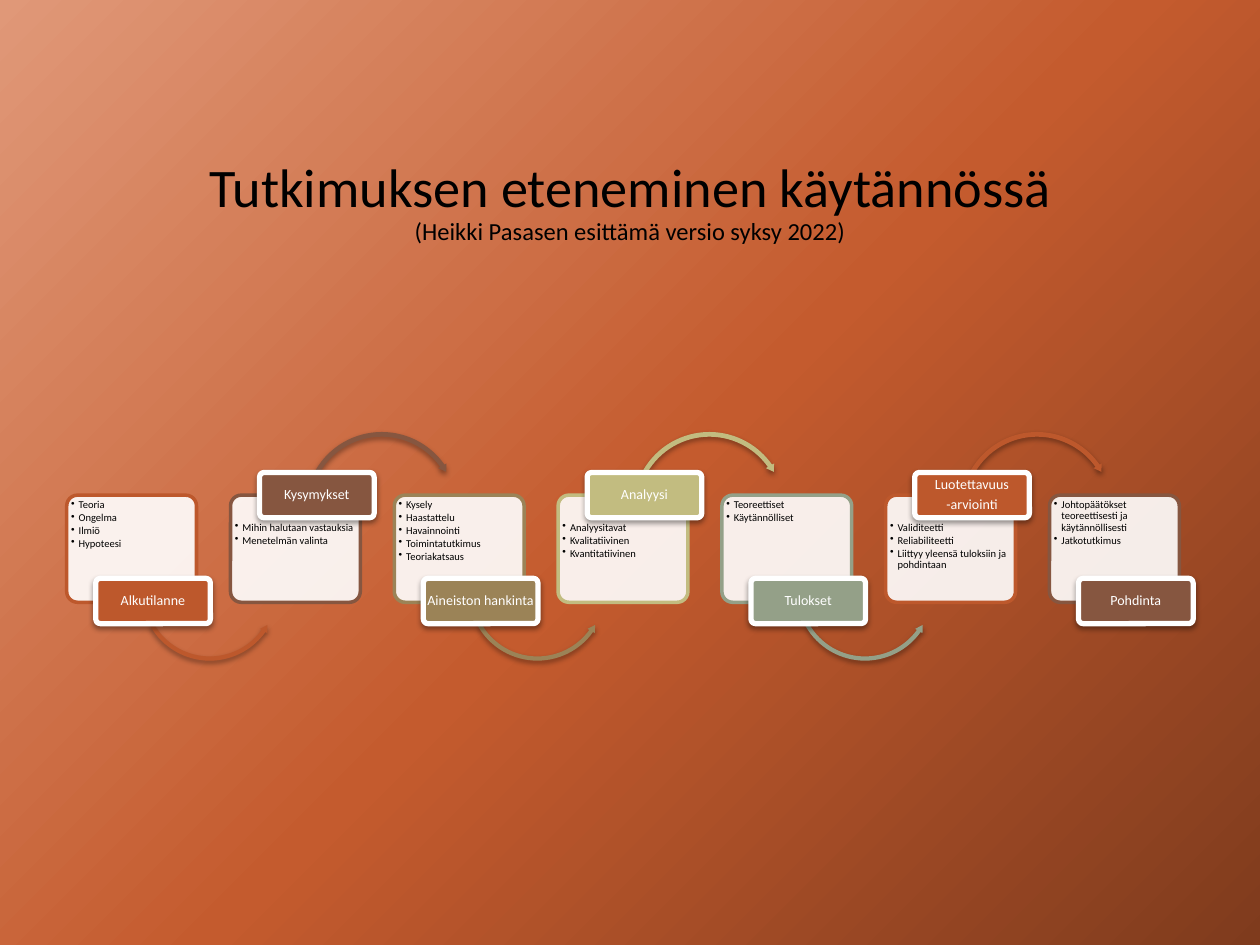
from dataclasses import dataclass

from lxml import etree
from pptx import Presentation
from pptx.dml.color import RGBColor
from pptx.enum.shapes import MSO_SHAPE
from pptx.enum.text import MSO_ANCHOR, MSO_AUTO_SIZE, PP_ALIGN
from pptx.oxml.ns import qn
from pptx.util import Inches, Pt

ROUNDED = MSO_SHAPE.ROUNDED_RECTANGLE
ARROW_OVER = MSO_SHAPE.CIRCULAR_ARROW
ARROW_UNDER = MSO_SHAPE.LEFT_CIRCULAR_ARROW
CENTER, LEFT = PP_ALIGN.CENTER, PP_ALIGN.LEFT
MIDDLE, TOP = MSO_ANCHOR.MIDDLE, MSO_ANCHOR.TOP
NO_AUTOFIT = MSO_AUTO_SIZE.NONE

FONT = "Calibri"
COLORS = {
    "black": "000000", "white": "FFFFFF",
    "rust": "BD582C", "brown": "865640", "ochre": "9B8357",
    "straw": "C2BC80", "sage": "94A088",
}
BACKGROUND_STOPS = {0: "7F3B1D", 48: "C45B2E", 100: "E09878"}

FIRST_LEFT, PITCH = 0.53, 1.3
CARD_TOP, CARD_WIDTH, CARD_HEIGHT = 3.93, 1.03, 0.85
LABEL_OFFSET, LABEL_WIDTH, LABEL_HEIGHT = 0.23, 0.91, 0.36
ARROW_OFFSET = 0.575


@dataclass(frozen=True)
class Step:
    label: list[str]
    color: str
    points: list[str]


@dataclass(frozen=True)
class Side:
    """Where a step carries its label and arrow: above or below its card."""
    label_top: float
    text_inset: float
    arrow_shape: int
    arrow_top: float
    arrow_size: float
    arrow_adjustments: tuple[float, ...]


BELOW = Side(4.59, 0.01, ARROW_UNDER, 4.14, 1.12, (0.03, 3.71, 21.46, 90.25, 0.03))
ABOVE = Side(3.75, 0.19, ARROW_OVER, 3.41, 1.25, (0.03, 3.29, 194.95, 125.76, 0.03))

STEPS = [
    Step(["Alkutilanne"], "rust", ["Teoria", "Ongelma", "Ilmiö", "Hypoteesi"]),
    Step(["Kysymykset"], "brown", ["Mihin halutaan vastauksia", "Menetelmän valinta"]),
    Step(["Aineiston hankinta"], "ochre",
         ["Kysely", "Haastattelu", "Havainnointi", "Toimintatutkimus", "Teoriakatsaus"]),
    Step(["Analyysi"], "straw", ["Analyysitavat", "Kvalitatiivinen", "Kvantitatiivinen"]),
    Step(["Tulokset"], "sage", ["Teoreettiset", "Käytännölliset"]),
    Step(["Luotettavuus", "-arviointi"], "rust",
         ["Validiteetti", "Reliabiliteetti", "Liittyy yleensä tuloksiin ja pohdintaan"]),
    Step(["Pohdinta"], "brown",
         ["Johtopäätökset teoreettisesti ja käytännöllisesti", "Jatkotutkimus"]),
]


def rgb(name: str) -> RGBColor:
    return RGBColor.from_string(COLORS[name])


def paint_background(slide) -> None:
    fill = slide.background.fill
    fill.gradient()
    fill.gradient_angle = 135
    stops = slide.element.find(".//" + qn("a:gsLst"))
    for stop in list(stops):
        stops.remove(stop)
    for percent, color in BACKGROUND_STOPS.items():
        stop = etree.SubElement(stops, qn("a:gs"), pos=str(percent * 1000))
        etree.SubElement(stop, qn("a:srgbClr"), val=color)


def add_run(para, text: str, size: float, color: str) -> None:
    run = para.add_run()
    run.text = text
    run.font.name = FONT
    run.font.size = Pt(size)
    run.font.color.rgb = rgb(color)


def add_title(slide) -> None:
    title = slide.shapes.title
    title.left, title.top = Inches(0.53), Inches(0.99)
    title.width, title.height = Inches(8.94), Inches(1.24)
    frame = title.text_frame
    frame.auto_size = NO_AUTOFIT
    frame.vertical_anchor = MIDDLE
    para = frame.paragraphs[0]
    para.alignment = CENTER
    para.line_spacing = 0.9
    add_run(para, "Tutkimuksen eteneminen käytännössä", 31, "black")
    para.add_line_break()
    add_run(para, "(Heikki Pasasen esittämä versio syksy 2022)", 14, "black")


def add_shape(slide, kind: int, left: float, top: float, width: float, height: float,
              fill: str, adjustments: tuple[float, ...]):
    shape = slide.shapes.add_shape(
        kind, Inches(left), Inches(top), Inches(width), Inches(height))
    shape.shadow.inherit = False
    shape.fill.solid()
    shape.fill.fore_color.rgb = rgb(fill)
    shape.line.fill.background()
    for index, value in enumerate(adjustments):
        shape.adjustments[index] = value
    return shape


def set_outline(shape, color: str, width: float) -> None:
    shape.line.color.rgb = rgb(color)
    shape.line.width = Pt(width)


def add_shadow(shape) -> None:
    effects = shape.element.spPr.find(qn("a:effectLst"))
    shadow = etree.SubElement(
        effects, qn("a:outerShdw"), blurRad=str(Pt(3.1)), dist=str(Pt(1.6)),
        dir="5400000", rotWithShape="0")
    color = etree.SubElement(shadow, qn("a:srgbClr"), val=COLORS["black"])
    etree.SubElement(color, qn("a:alpha"), val="38000")


def add_bullet(para) -> None:
    para.level = 1
    properties = para._p.get_or_add_pPr()
    properties.set("marL", str(Inches(0.06)))
    properties.set("indent", str(-Inches(0.06)))
    etree.SubElement(properties, qn("a:buChar"), char="•")


def write_lines(shape, lines: list[str], size: float, color: str, space_after: float,
                side_inset: float, top_inset: float, bulleted: bool) -> None:
    frame = shape.text_frame
    frame.word_wrap = True
    frame.margin_left = frame.margin_right = Inches(side_inset)
    frame.margin_top, frame.margin_bottom = Inches(top_inset), Inches(0.01)
    frame.vertical_anchor = TOP if bulleted else MIDDLE
    for index, line in enumerate(lines):
        para = frame.add_paragraph() if index else frame.paragraphs[0]
        para.alignment = LEFT if bulleted else CENTER
        para.line_spacing = 0.9
        para.space_after = Pt(space_after)
        if bulleted:
            add_bullet(para)
        add_run(para, line, size, color)


def add_step(slide, step: Step, left: float, side: Side, has_arrow: bool) -> None:
    card = add_shape(slide, ROUNDED, left, CARD_TOP, CARD_WIDTH, CARD_HEIGHT,
                     "white", (0.1,))
    white = card.element.spPr.find(qn("a:solidFill"))[0]
    etree.SubElement(white, qn("a:alpha"), val="90000")
    set_outline(card, step.color, 2)
    write_lines(card, step.points, 6, "black", 0.9, 0.01, side.text_inset, True)

    if has_arrow:
        arrow = add_shape(slide, side.arrow_shape, left + ARROW_OFFSET, side.arrow_top,
                          side.arrow_size, side.arrow_size, step.color,
                          side.arrow_adjustments)
        add_shadow(arrow)

    label = add_shape(slide, ROUNDED, left + LABEL_OFFSET, side.label_top,
                      LABEL_WIDTH, LABEL_HEIGHT, step.color, (0.1,))
    set_outline(label, "white", 3)
    add_shadow(label)
    write_lines(label, step.label, 8, "white", 2.8, 0.01, 0.01, False)


def main() -> None:
    deck = Presentation()
    deck.slide_width, deck.slide_height = Inches(10), Inches(7.5)
    slide = deck.slides.add_slide(deck.slide_layouts[5])
    paint_background(slide)
    add_title(slide)
    for index, step in enumerate(STEPS):
        side = ABOVE if index % 2 else BELOW
        add_step(slide, step, FIRST_LEFT + index * PITCH, side, index < len(STEPS) - 1)
    deck.save("out.pptx")


if __name__ == "__main__":
    main()
